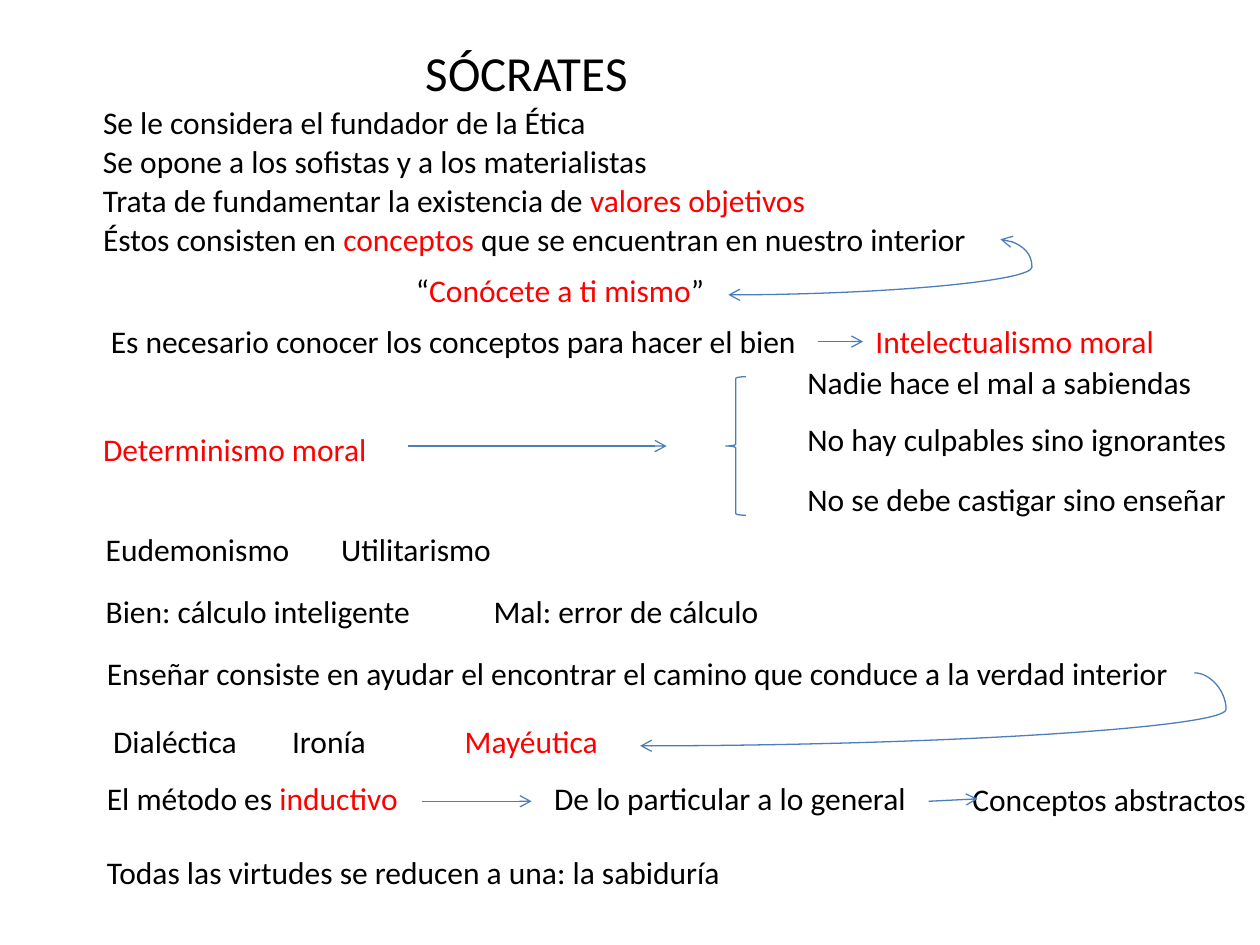
from lxml.etree import SubElement
from pptx import Presentation
from pptx.dml.color import RGBColor
from pptx.enum.shapes import MSO_CONNECTOR as LINK, MSO_SHAPE as SHAPE
from pptx.enum.text import MSO_ANCHOR as ANCHOR, MSO_AUTO_SIZE as FIT, PP_ALIGN as ALIGN
from pptx.oxml.ns import qn
from pptx.util import Pt

BLACK, RED, BLUE = "000000", "FF0000", "4B7EBC"
ROW_HEIGHT = 29
CONCLUSIONS_LEFT = 454.3

# Words between asterisks are red: left, top, width, text
STATEMENTS = [
    (51.8, 55.4, 293.8, "Se le considera el fundador de la Ética"),
    (51.8, 77.8, 333.4, "Se opone a los sofistas y a los materialistas"),
    (51.8, 100.1, 420.5, "Trata de fundamentar la existencia de *valores objetivos*"),
    (51.8, 122.4, 519.8, "Éstos consisten en *conceptos *que se encuentran en nuestro interior"),
    (51.8, 241.9, 167, "*Determinismo moral*"),
    (CONCLUSIONS_LEFT, 203.8, 236.9, "Nadie hace el mal a sabiendas"),
    (CONCLUSIONS_LEFT, 236.2, 259.2, "No hay culpables sino ignorantes"),
    (CONCLUSIONS_LEFT, 270.7, 257, "No se debe castigar sino enseñar"),
    (53.3, 299.5, 121, "Eudemonismo"),
    (187.9, 299.5, 100.8, "Utilitarismo"),
    (53.3, 334.8, 190.8, "Bien: cálculo inteligente"),
    (275, 334.8, 167.8, "Mal: error de cálculo"),
    (54, 370.1, 628.6, "Enseñar consiste en ayudar el encontrar el camino que conduce a la verdad interior"),
    (57.6, 409, 86.4, "Dialéctica"),
    (159.8, 409, 56.9, "Ironía"),
    (258.5, 409, 91.4, "*Mayéutica*"),
    (54, 441.4, 182.2, "El método es *inductivo*"),
    (309.6, 441.4, 218.2, "De lo particular a lo general"),
    (548.6, 442.1, 172.8, "Conceptos abstractos"),
    (54, 483.8, 369.4, "Todas las virtudes se reducen a una: la sabiduría"),
]

ARROWS = [
    (233.3, 254.9, 380.9, 254.9),
    (241.2, 457.9, 303.8, 457.9),
    (530.6, 457.9, 558.7, 456.5),
]


def color(code):
    """Return the colour for a hex string."""
    return RGBColor.from_string(code)


def style_run(run, size, code):
    """Set font, size and colour of a run."""
    run.font.name = "Calibri"
    run.font.size = Pt(size)
    run.font.color.rgb = color(code)


def add_title(slide, text):
    """Place and format the slide title."""
    title = slide.shapes.title
    title.left, title.top, title.width, title.height = Pt(235.4), Pt(20.9), Pt(131), Pt(41)
    frame = title.text_frame
    frame.text = text
    frame.word_wrap = False
    frame.auto_size = FIT.SHAPE_TO_FIT_TEXT
    frame.vertical_anchor = ANCHOR.TOP
    frame.paragraphs[0].alignment = ALIGN.CENTER
    style_run(frame.paragraphs[0].runs[0], 28, BLACK)


def add_statement(slide, left, top, width, text, align=ALIGN.LEFT):
    """Add one line of text, with the words between asterisks in red."""
    statement = slide.shapes.add_textbox(Pt(left), Pt(top), Pt(width), Pt(ROW_HEIGHT))
    frame = statement.text_frame
    frame.word_wrap = False
    frame.auto_size = FIT.SHAPE_TO_FIT_TEXT
    paragraph = frame.paragraphs[0]
    paragraph.alignment = align
    for index, words in enumerate(text.split("*")):
        if words:
            run = paragraph.add_run()
            run.text = words
            style_run(run, 18, RED if index % 2 else BLACK)
    return statement


def add_arrow(slide, start_x, start_y, end_x, end_y, bend=None, both_ends=False):
    """Add a thin arrow, curved when a bend in thousandths of a percent is given."""
    route = LINK.STRAIGHT if bend is None else LINK.CURVE
    arrow = slide.shapes.add_connector(route, Pt(start_x), Pt(start_y), Pt(end_x), Pt(end_y))
    arrow.line.color.rgb = color(BLUE)
    arrow.line.width = Pt(0.75)
    outline = arrow.line._get_or_add_ln()
    for tip in ("a:headEnd", "a:tailEnd") if both_ends else ("a:tailEnd",):
        SubElement(outline, qn(tip), type="arrow")
    properties = arrow._element.spPr
    SubElement(properties, qn("a:effectLst"))
    if bend is not None:
        guides = properties.find(qn("a:prstGeom")).get_or_add_avLst()
        SubElement(guides, qn("a:gd"), name="adj1", fmla=f"val {bend}")
    return arrow


def add_brace(slide, left, top, width, height):
    """Add the brace that gathers the conclusions."""
    brace = slide.shapes.add_shape(SHAPE.LEFT_BRACE, Pt(left), Pt(top), Pt(width), Pt(height))
    brace.shadow.inherit = False
    brace.fill.background()
    brace.line.color.rgb = color(BLUE)
    brace.line.width = Pt(0.75)


def main():
    """Build the slide and save it."""
    deck = Presentation()
    deck.slide_width, deck.slide_height = Pt(720), Pt(540)
    slide = deck.slides.add_slide(deck.slide_layouts[5])

    add_title(slide, "SÓCRATES")
    for statement in STATEMENTS:
        add_statement(slide, *statement)
    add_statement(slide, 229.7, 151.2, 180.7, "“*Conócete a ti mismo*”", ALIGN.CENTER)

    knowledge = add_statement(
        slide, 56.2, 180.7, 411.1, "Es necesario conocer los conceptos para hacer el bien")
    intellectualism = add_statement(slide, 493.2, 180.7, 175.7, "*Intelectualismo moral*")
    implication = add_arrow(slide, 467.3, 195.2, 493.2, 195.2)
    implication.begin_connect(knowledge, 3)
    implication.end_connect(intellectualism, 1)

    for arrow in ARROWS:
        add_arrow(slide, *arrow)
    add_arrow(slide, 571.7, 136.8, 416.2, 168.5, bend=-11600, both_ends=True)
    add_arrow(slide, 682.6, 384.5, 365.8, 426.2, bend=-5700)
    add_brace(slide, 414.7, 215.3, 11.5, 79.2)

    deck.save("out.pptx")


if __name__ == "__main__":
    main()
